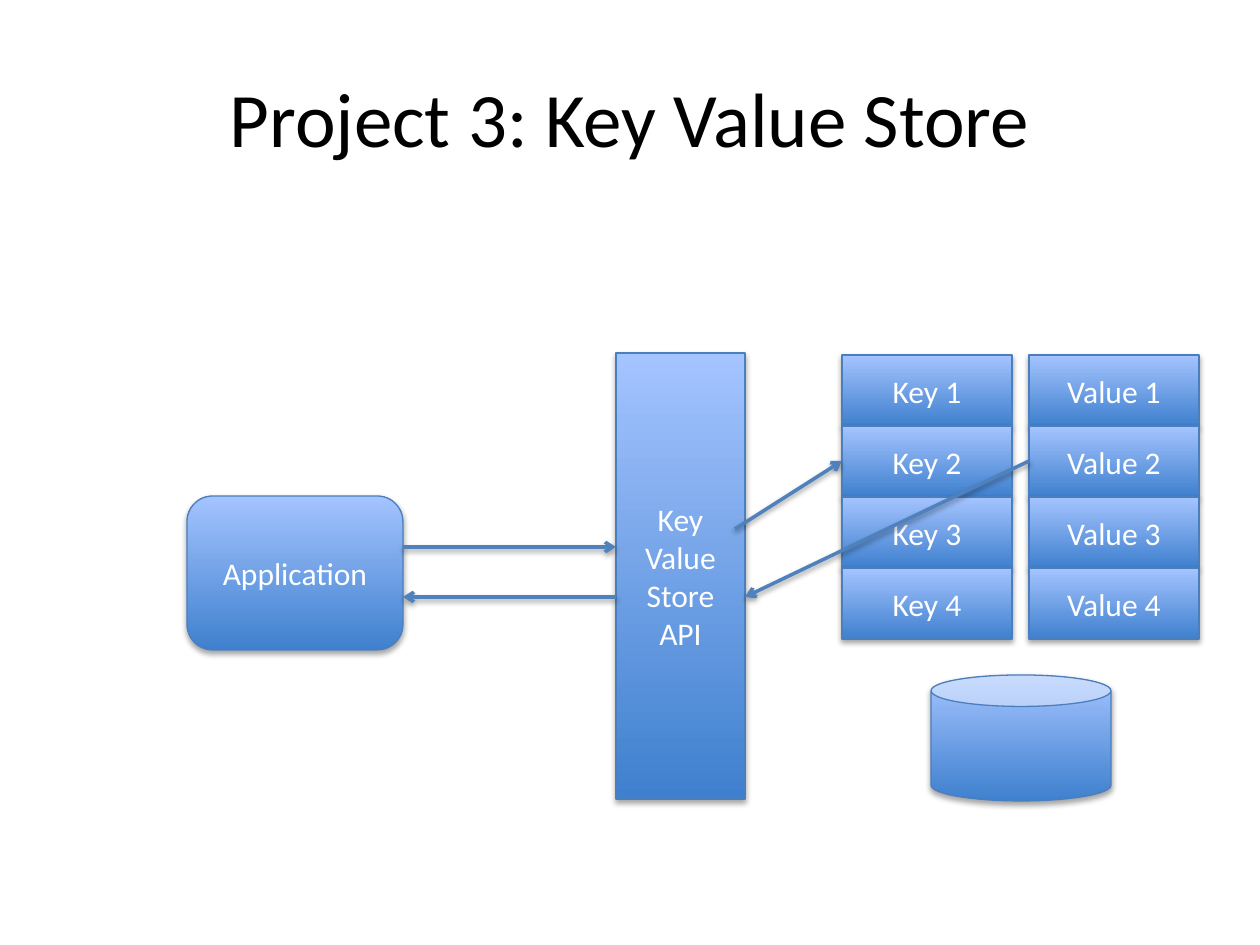
from dataclasses import dataclass

from lxml import etree
from pptx import Presentation
from pptx.dml.color import RGBColor
from pptx.enum.shapes import MSO_CONNECTOR, MSO_SHAPE
from pptx.enum.text import MSO_ANCHOR, PP_ALIGN
from pptx.oxml.ns import qn
from pptx.util import Emu, Pt

RECT = MSO_SHAPE.RECTANGLE
ROUND = MSO_SHAPE.ROUNDED_RECTANGLE
CAN = MSO_SHAPE.CAN
LINE = MSO_CONNECTOR.STRAIGHT
CENTER = PP_ALIGN.CENTER
MIDDLE = MSO_ANCHOR.MIDDLE

SCALE = 914400 / 126
FONT = "Calibri"
COLORS = {
    "black": "000000",
    "white": "FFFFFF",
    "deep": "3F80CE",
    "pale": "A4C4FF",
    "edge": "4B7EBC",
    "arrow": "4F81BD",
}


@dataclass
class Box:
    kind: int
    left: int
    top: int
    width: int
    height: int
    text: str = ""


@dataclass
class Arrow:
    x1: int
    y1: int
    x2: int
    y2: int


API = Box(RECT, 616, 353, 129, 446, "Key Value Store API")
APP = Box(ROUND, 187, 496, 216, 154, "Application")
DISK = Box(CAN, 931, 675, 180, 126)
COLUMNS = {"Key": 842, "Value": 1029}
ROWS = 4
CELL_TOP, CELL_WIDTH, CELL_HEIGHT = 355, 170, 71
ARROWS = [
    Arrow(403, 547, 616, 547),
    Arrow(616, 597, 403, 597),
    Arrow(735, 529, 842, 461),
    Arrow(1029, 461, 745, 597),
]


def px(*values: int) -> list[Emu]:
    return [Emu(round(value * SCALE)) for value in values]


def color(name: str) -> RGBColor:
    return RGBColor.from_string(COLORS[name])


def write(shape, text: str, *, size: int = 18, ink: str = "white") -> None:
    frame = shape.text_frame
    frame.word_wrap = True
    frame.vertical_anchor = MIDDLE
    para = frame.paragraphs[0]
    para.alignment = CENTER
    run = para.add_run()
    run.text = text
    run.font.name = FONT
    run.font.size = Pt(size)
    run.font.color.rgb = color(ink)


def add_shadow(props, drop: int, alpha: int) -> None:
    effects = props.find(qn("a:effectLst"))
    if effects is None:
        effects = etree.SubElement(props, qn("a:effectLst"))
    shade = etree.SubElement(
        effects, qn("a:outerShdw"), blurRad="40000", dist=str(drop),
        dir="5400000", rotWithShape="0",
    )
    tint = etree.SubElement(shade, qn("a:srgbClr"), val=COLORS["black"])
    etree.SubElement(tint, qn("a:alpha"), val=str(alpha * 1000))


def add_box(shapes, box: Box) -> None:
    shape = shapes.add_shape(
        box.kind, *px(box.left, box.top, box.width, box.height)
    )
    shape.fill.gradient()
    shape.fill.gradient_angle = 90
    for stop, name in zip(shape.fill.gradient_stops, ("deep", "pale")):
        stop.color.rgb = color(name)
    shape.line.color.rgb = color("edge")
    shape.line.width = Pt(0.75)
    shape.shadow.inherit = False
    add_shadow(shape._element.spPr, 23000, 35)
    if box.text:
        write(shape, box.text)


def add_arrow(shapes, arrow: Arrow) -> None:
    link = shapes.add_connector(
        LINE, *px(arrow.x1, arrow.y1, arrow.x2, arrow.y2)
    )
    link.line.color.rgb = color("arrow")
    link.line.width = Pt(2)
    props = link._element.spPr
    etree.SubElement(props.find(qn("a:ln")), qn("a:tailEnd"), type="arrow")
    add_shadow(props, 20000, 38)


def add_store(shapes) -> None:
    group = shapes.add_group_shape()
    for row in range(ROWS):
        top = CELL_TOP + row * CELL_HEIGHT
        for label, left in COLUMNS.items():
            text = f"{label} {row + 1}"
            add_box(
                group.shapes,
                Box(RECT, left, top, CELL_WIDTH, CELL_HEIGHT, text),
            )


def main() -> None:
    deck = Presentation()
    deck.slide_width, deck.slide_height = px(1260, 945)
    slide = deck.slides.add_slide(deck.slide_layouts[5])
    shapes = slide.shapes
    title = shapes.title
    title.left, title.top, title.width, title.height = px(63, 38, 1134, 158)
    write(title, "Project 3: Key Value Store", size=44, ink="black")
    add_box(shapes, API)
    add_box(shapes, APP)
    add_store(shapes)
    add_box(shapes, DISK)
    for arrow in ARROWS:
        add_arrow(shapes, arrow)
    deck.save("out.pptx")


if __name__ == "__main__":
    main()
